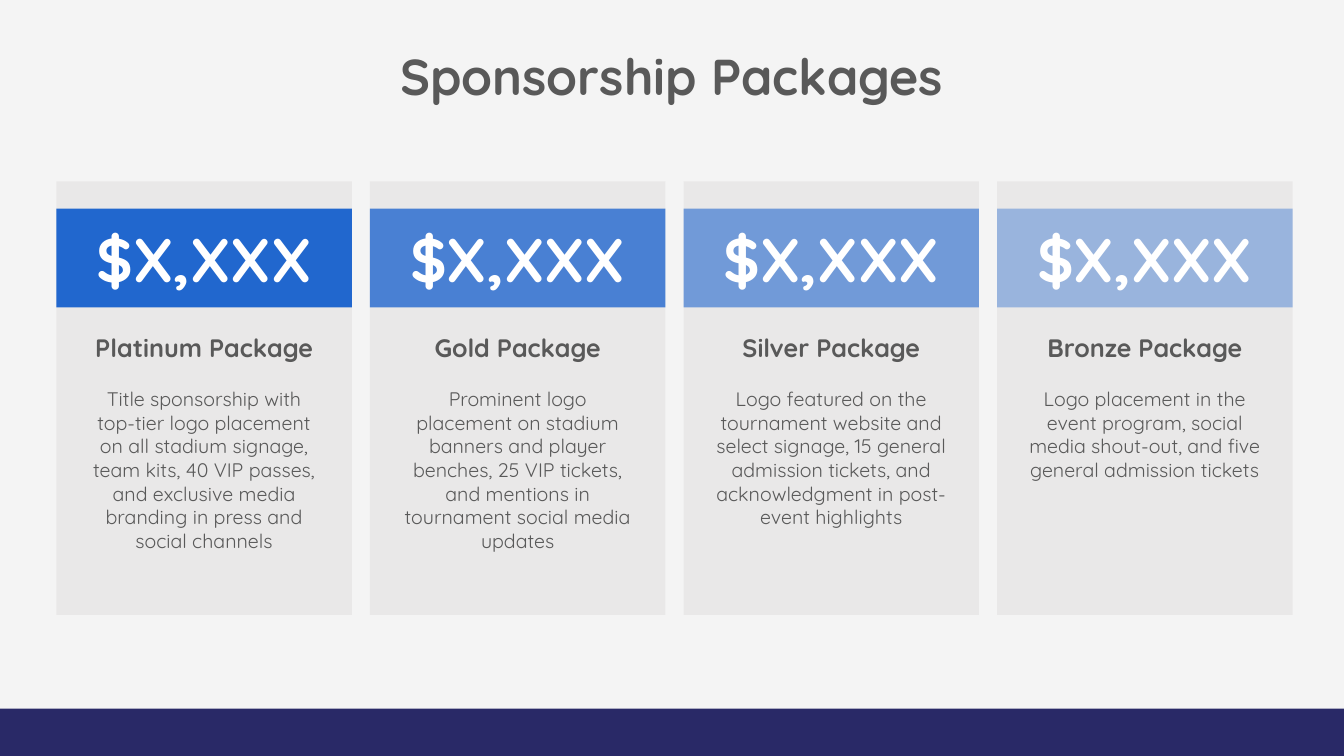
from lxml import etree
from pptx import Presentation
from pptx.dml.color import RGBColor
from pptx.enum.shapes import MSO_SHAPE
from pptx.enum.text import MSO_ANCHOR, PP_ALIGN
from pptx.oxml.ns import qn
from pptx.util import Inches, Pt

RECTANGLE = MSO_SHAPE.RECTANGLE
CENTER = PP_ALIGN.CENTER
MIDDLE = MSO_ANCHOR.MIDDLE

FONT = "Quicksand"
BACKGROUND = RGBColor(0xF4, 0xF4, 0xF4)
CARD_GRAY = RGBColor(0xE7, 0xE6, 0xE6)
PRICE_BLUE = RGBColor(0x21, 0x67, 0xCE)
FOOTER_NAVY = RGBColor(0x29, 0x29, 0x67)
TEXT_GRAY = RGBColor(0x59, 0x59, 0x59)
WHITE = RGBColor(0xFF, 0xFF, 0xFF)

SLIDE_WIDTH, SLIDE_HEIGHT = 13.33, 7.5
CARD_LEFT, CARD_TOP, CARD_WIDTH, CARD_HEIGHT = 0.56, 1.8, 2.93, 4.3
CARD_PITCH = 3.11
FOOTER_HEIGHT = 0.47

# Package name, benefits, opacity of the price band in percent
PACKAGES = [
    ("Platinum Package",
     "Title sponsorship with top-tier logo placement on all stadium signage, "
     "team kits, 40 VIP passes, and exclusive media branding in press and "
     "social channels", 100),
    ("Gold Package",
     "Prominent logo placement on stadium banners and player benches, 25 VIP "
     "tickets, and mentions in tournament social media updates", 80),
    ("Silver Package",
     "Logo featured on the tournament website and select signage, 15 general "
     "admission tickets, and acknowledgment in post-event highlights", 60),
    ("Bronze Package",
     "Logo placement in the event program, social media shout-out, and five "
     "general admission tickets", 40),
]


def write_centered(paragraph, text, size, color, bold):
    paragraph.text = text
    paragraph.alignment = CENTER
    font = paragraph.runs[0].font
    font.name = FONT
    font.size = Pt(size)
    font.bold = bold
    font.color.rgb = color


def add_rectangle(slide, left, top, width, height, color, opacity=100):
    """Add a borderless rectangle; opacity is in percent."""
    shape = slide.shapes.add_shape(
        RECTANGLE, Inches(left), Inches(top), Inches(width), Inches(height))
    shape.shadow.inherit = False
    shape.line.fill.background()
    shape.fill.solid()
    shape.fill.fore_color.rgb = color
    if opacity < 100:
        color_element = shape.fill._xPr.find(qn("a:solidFill"))[0]
        alpha = etree.SubElement(color_element, qn("a:alpha"))
        alpha.set("val", str(opacity * 1000))
    return shape


def add_title(slide, left, top, width, height):
    title = slide.shapes.add_textbox(
        Inches(left), Inches(top), Inches(width), Inches(height))
    title.text_frame.word_wrap = True
    write_centered(title.text_frame.paragraphs[0], "Sponsorship Packages",
                   36, TEXT_GRAY, True)


def add_package_card(slide, left, top, width, height, name, benefits, opacity):
    card = add_rectangle(slide, left, top, width, height, CARD_GRAY, 80)
    frame = card.text_frame
    frame.word_wrap = True
    frame.vertical_anchor = MSO_ANCHOR.TOP
    frame.margin_left = frame.margin_right = frame.margin_bottom = Inches(0.3)
    frame.margin_top = Inches(1.5)
    write_centered(frame.paragraphs[0], name, 18, TEXT_GRAY, True)
    description = frame.add_paragraph()
    write_centered(description, benefits, 14, TEXT_GRAY, False)
    description.space_before = Pt(17.5)

    band = add_rectangle(slide, left, top + 0.27, width, 0.98, PRICE_BLUE, opacity)
    band.text_frame.vertical_anchor = MIDDLE
    write_centered(band.text_frame.paragraphs[0], "$X,XXX", 44, WHITE, True)


def build_packages_slide(presentation):
    slide = presentation.slides.add_slide(presentation.slide_layouts[6])
    slide.background.fill.solid()
    slide.background.fill.fore_color.rgb = BACKGROUND
    add_title(slide, 2.82, 0.4, 7.68, 0.71)
    for index, (name, benefits, opacity) in enumerate(PACKAGES):
        add_package_card(slide, CARD_LEFT + index * CARD_PITCH, CARD_TOP,
                         CARD_WIDTH, CARD_HEIGHT, name, benefits, opacity)
    add_rectangle(slide, 0, SLIDE_HEIGHT - FOOTER_HEIGHT,
                  SLIDE_WIDTH, FOOTER_HEIGHT, FOOTER_NAVY)


def main():
    presentation = Presentation()
    presentation.slide_width = Inches(SLIDE_WIDTH)
    presentation.slide_height = Inches(SLIDE_HEIGHT)
    build_packages_slide(presentation)
    presentation.save("out.pptx")


if __name__ == "__main__":
    main()
